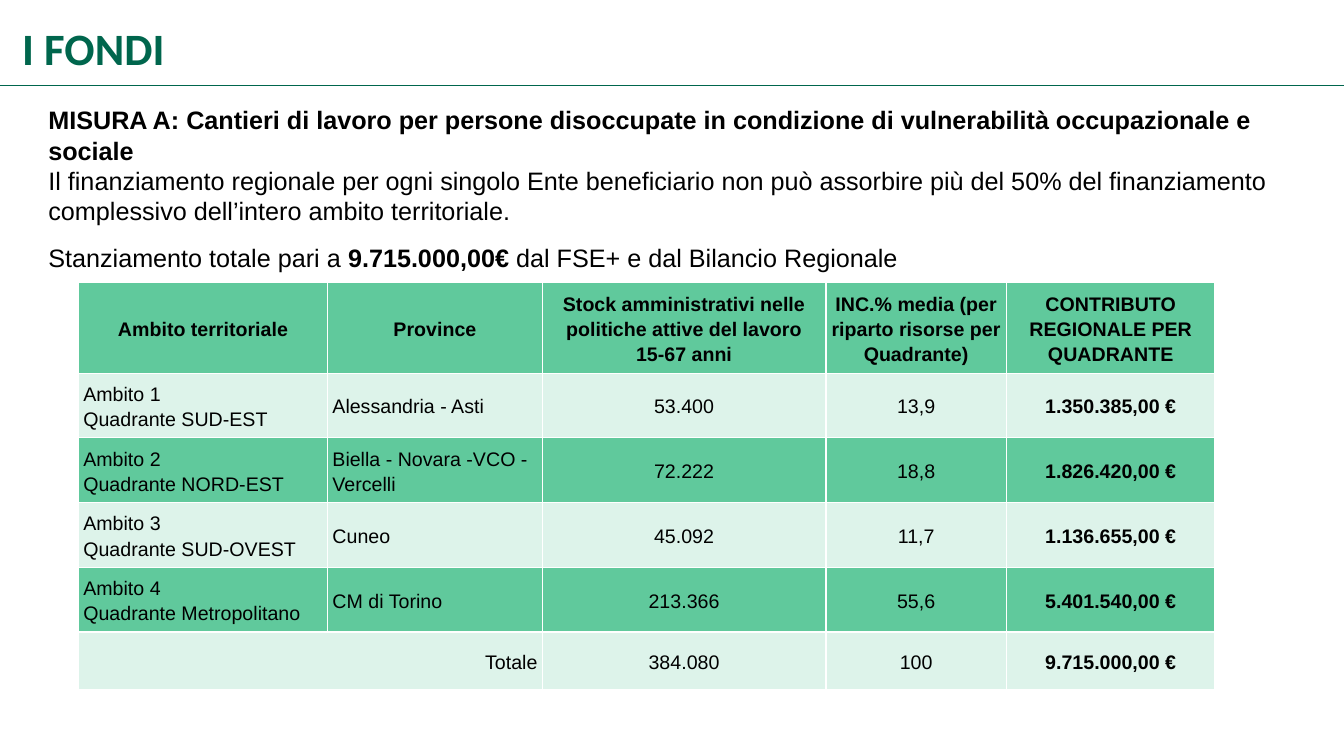
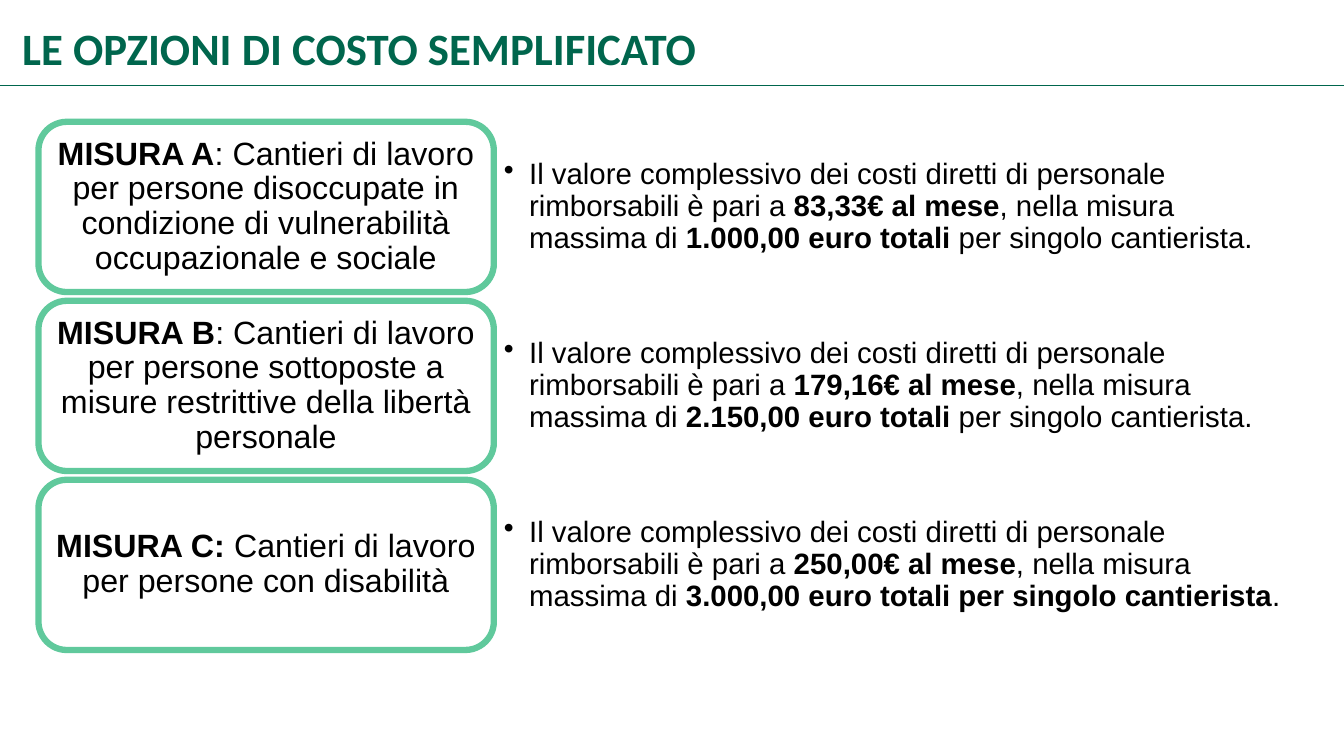
from lxml import etree
from pptx import Presentation
from pptx.dml.color import RGBColor
from pptx.enum import shapes, text
from pptx.oxml import ns
from pptx.util import Cm, Pt

COLORS = {
    "title": "00664D",
    "green": "60C99C",
    "pale": "DDF3EA",
    "white": "FFFFFF",
    "black": "000000",
}
SLIDE_WIDTH, SLIDE_HEIGHT = 33.88, 19.05
LEFT, CENTER, RIGHT = text.PP_ALIGN.LEFT, text.PP_ALIGN.CENTER, text.PP_ALIGN.RIGHT
MIDDLE = text.MSO_ANCHOR.MIDDLE

# Funds table: bold text is enclosed in **
HEADERS = [
    "Ambito territoriale",
    "Province",
    "Stock amministrativi nelle politiche attive del lavoro\n15-67 anni",
    "INC.% media (per riparto risorse per Quadrante)",
    "CONTRIBUTO REGIONALE PER QUADRANTE",
]
AREAS = [
    ("Ambito 1\nQuadrante SUD-EST", "Alessandria - Asti", "53.400", "13,9", "1.350.385,00 €"),
    ("Ambito 2\nQuadrante NORD-EST", "Biella - Novara -VCO - Vercelli",
     "72.222", "18,8", "1.826.420,00 €"),
    ("Ambito 3\nQuadrante SUD-OVEST", "Cuneo", "45.092", "11,7", "1.136.655,00 €"),
    ("Ambito 4\nQuadrante Metropolitano", "CM di Torino", "213.366", "55,6", "5.401.540,00 €"),
]
TOTAL = ("Totale", "", "384.080", "100", "9.715.000,00 €")
COLUMN_WIDTHS = [6.28, 5.41, 7.15, 4.55, 5.26]
ROW_HEIGHTS = [2.18] + [1.63] * len(AREAS) + [1.45]

FUNDS_INTRO = (
    "**MISURA A: Cantieri di lavoro per persone disoccupate in condizione di "
    "vulnerabilità occupazionale e sociale**\n"
    "Il finanziamento regionale per ogni singolo Ente beneficiario non può assorbire "
    "più del 50% del finanziamento complessivo dell’intero ambito territoriale.\n"
    "Stanziamento totale pari a **9.715.000,00€** dal FSE+ e dal Bilancio Regionale"
)

# Measures: description, then monthly and total amounts
MEASURES = [
    ("**MISURA A**: Cantieri di lavoro per persone disoccupate in condizione di "
     "vulnerabilità occupazionale e sociale",
     "83,33€", "1.000,00 euro totali** per singolo cantierista."),
    ("**MISURA B**: Cantieri di lavoro per persone sottoposte a misure restrittive "
     "della libertà personale",
     "179,16€", "2.150,00 euro totali** per singolo cantierista."),
    ("**MISURA C:** Cantieri di lavoro per persone con disabilità",
     "250,00€", "3.000,00 euro totali per singolo cantierista**."),
]
COST = ("Il valore complessivo dei costi diretti di personale rimborsabili è pari a "
        "**{} al mese**, nella misura massima di **{}")


def rgb(name):
    return RGBColor.from_string(COLORS[name])


def add_bullet(paragraph, indent):
    properties = paragraph._p.get_or_add_pPr()
    properties.set("marL", str(Cm(indent)))
    properties.set("indent", str(-Cm(indent)))
    etree.SubElement(properties, ns.qn("a:buChar")).set("char", "•")


def write(frame, content, size=18, font="Arial", color="black", align=LEFT,
          anchor=text.MSO_ANCHOR.TOP, spacing=None, bullet=0, last_gap=0):
    """Fill a text frame: one paragraph per line, bold between ** marks."""
    frame.word_wrap = True
    frame.vertical_anchor = anchor
    lines = content.split("\n")
    for index, line in enumerate(lines):
        paragraph = frame.add_paragraph() if index else frame.paragraphs[0]
        if bullet:
            add_bullet(paragraph, bullet)
        paragraph.alignment = align
        if spacing:
            paragraph.line_spacing = spacing
        if last_gap and index == len(lines) - 1:
            paragraph.space_before = Pt(last_gap)
        for position, part in enumerate(line.split("**")):
            if part:
                run = paragraph.add_run()
                run.text = part
                run.font.name = font
                run.font.size = Pt(size)
                run.font.bold = position % 2 == 1
                run.font.color.rgb = rgb(color)


def set_margins(target, horizontal, vertical):
    target.margin_left = target.margin_right = Cm(horizontal)
    target.margin_top = target.margin_bottom = Cm(vertical)


def add_text(slide, left, top, width, height, content, margins=(0.25, 0.13), **style):
    box = slide.shapes.add_textbox(Cm(left), Cm(top), Cm(width), Cm(height))
    set_margins(box.text_frame, *margins)
    write(box.text_frame, content, **style)


def add_titled_slide(presentation, title):
    slide = presentation.slides.add_slide(presentation.slide_layouts[6])
    add_text(slide, 0.56, 0.41, 30.48, 1.75, f"**{title}**", margins=(0, 0), size=32,
             font="Calibri", color="title", anchor=MIDDLE, spacing=0.9)
    rule = slide.shapes.add_connector(shapes.MSO_CONNECTOR.STRAIGHT,
                                      0, Cm(2.16), Cm(SLIDE_WIDTH), Cm(2.16))
    rule.line.color.rgb = rgb("title")
    rule.line.width = Pt(0.75)
    etree.SubElement(rule._element.spPr, ns.qn("a:effectLst"))
    return slide


def add_borders(cell, color="white", width=0.96):
    properties = cell._tc.get_or_add_tcPr()
    for side in ("lnL", "lnR", "lnT", "lnB"):
        line = etree.SubElement(properties, ns.qn(f"a:{side}"), w=str(Pt(width)))
        fill = etree.SubElement(line, ns.qn("a:solidFill"))
        etree.SubElement(fill, ns.qn("a:srgbClr"), val=COLORS[color])


def add_funds_table(slide, left, top):
    rows = [HEADERS, *AREAS, TOTAL]
    table = slide.shapes.add_table(len(rows), len(HEADERS), Cm(left), Cm(top),
                                   Cm(sum(COLUMN_WIDTHS)), Cm(sum(ROW_HEIGHTS))).table
    for column, width in zip(table.columns, COLUMN_WIDTHS):
        column.width = Cm(width)
    for row, height in zip(table.rows, ROW_HEIGHTS):
        row.height = Cm(height)
    last_row, last_column = len(rows) - 1, len(HEADERS) - 1
    for row_index, values in enumerate(rows):
        for column_index, value in enumerate(values):
            cell = table.cell(row_index, column_index)
            set_margins(cell, 0.12, 0.12)
            add_borders(cell)
            cell.fill.solid()
            cell.fill.fore_color.rgb = rgb("pale" if row_index % 2 else "green")
            if row_index == 0 or column_index == last_column:
                value = "\n".join(f"**{line}**" for line in value.split("\n"))
            if row_index == 0 or column_index > 1:
                align = CENTER
            else:
                align = RIGHT if row_index == last_row else LEFT
            write(cell.text_frame, value, size=14, align=align, spacing=1.15)
            cell.vertical_anchor = MIDDLE
    table.cell(last_row, 0).merge(table.cell(last_row, 1))


def add_measure(slide, top, height, description, cost):
    box = slide.shapes.add_shape(shapes.MSO_SHAPE.ROUNDED_RECTANGLE,
                                 Cm(0.97), Cm(top), Cm(11.48), Cm(height))
    box.shadow.inherit = False
    box.fill.solid()
    box.fill.fore_color.rgb = rgb("white")
    box.line.color.rgb = rgb("green")
    box.line.width = Pt(4.5)
    set_margins(box.text_frame, 0.22, 0.13)
    write(box.text_frame, description, size=23, align=CENTER, anchor=MIDDLE, spacing=0.9)
    add_text(slide, 12.47, top, 20.24, height, cost, margins=(0.23, 0.1),
             size=21, anchor=MIDDLE, spacing=0.9, bullet=0.64)


def main():
    presentation = Presentation()
    presentation.slide_width = Cm(SLIDE_WIDTH)
    presentation.slide_height = Cm(SLIDE_HEIGHT)

    # Funds
    slide = add_titled_slide(presentation, "I FONDI")
    add_text(slide, 0.97, 2.51, 31.9, 4.6, FUNDS_INTRO, last_gap=12)
    add_funds_table(slide, 1.98, 7.12)

    # Simplified cost options
    slide = add_titled_slide(presentation, "LE OPZIONI DI COSTO SEMPLIFICATO")
    height, gap = 4.29, 0.22
    for index, (description, monthly, total) in enumerate(MEASURES):
        add_measure(slide, 3.07 + index * (height + gap), height,
                    description, COST.format(monthly, total))

    presentation.save("out.pptx")


if __name__ == "__main__":
    main()
